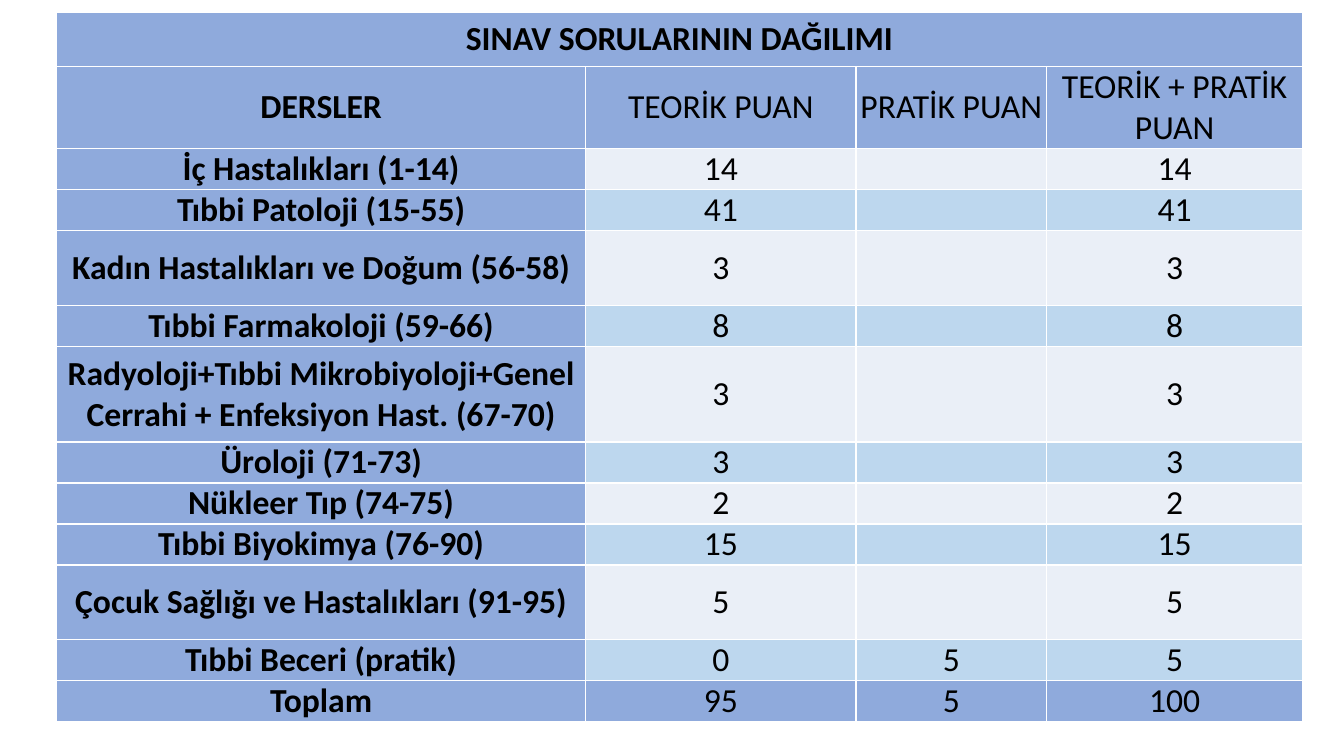
from lxml.etree import SubElement
from pptx import Presentation
from pptx.dml.color import RGBColor
from pptx.enum.text import MSO_ANCHOR, PP_ALIGN
from pptx.oxml.ns import qn
from pptx.util import Inches, Pt

# Content
TITLE = "SINAV SORULARININ DAĞILIMI"
HEADINGS = ("DERSLER", "TEORİK PUAN", "PRATİK PUAN", "TEORİK + PRATİK PUAN")
COURSES = [
    ("İç Hastalıkları (1-14)", "14", "", "14"),
    ("Tıbbi Patoloji (15-55)", "41", "", "41"),
    ("Kadın Hastalıkları ve Doğum (56-58)", "3", "", "3"),
    ("Tıbbi Farmakoloji (59-66)", "8", "", "8"),
    ("Radyoloji+Tıbbi Mikrobiyoloji+Genel Cerrahi + Enfeksiyon Hast. (67-70)",
     "3", "", "3"),
    ("Üroloji (71-73)", "3", "", "3"),
    ("Nükleer Tıp (74-75)", "2", "", "2"),
    ("Tıbbi Biyokimya (76-90)", "15", "", "15"),
    ("Çocuk Sağlığı ve Hastalıkları (91-95)", "5", "", "5"),
    ("Tıbbi Beceri (pratik)", "0", "5", "5"),
]
TOTALS = ("Toplam", "95", "5", "100")
GRID = [(TITLE, "", "", ""), HEADINGS, *COURSES, TOTALS]

COLORS = {"header": "8FAADC", "light": "EAEFF7", "blue": "BDD7EE",
          "border": "FFFFFF", "text": "000000"}
LEFT, TOP, WIDTH, HEIGHT = 0.56, 0.12, 12.37, 6.96
COLUMN_WIDTHS = (5.25, 2.68, 1.89, 2.54)
ROW_HEIGHT = 0.37
TALL_ROWS = {0: 0.54, 4: 0.74, 6: 0.95, 10: 0.74}


def write(cell, text, size=24, bold=False, font="Calibri", color="text"):
    paragraph = cell.text_frame.paragraphs[0]
    paragraph.alignment = PP_ALIGN.CENTER
    run = paragraph.add_run()
    run.text = text
    run.font.size = Pt(size)
    run.font.bold = bold
    run.font.name = font
    run.font.color.rgb = RGBColor.from_string(COLORS[color])


def style_cell(cell, fill):
    cell.vertical_anchor = MSO_ANCHOR.MIDDLE
    cell.margin_left = cell.margin_right = cell.margin_top = cell.margin_bottom = 0
    properties = cell._tc.get_or_add_tcPr()
    for side in ("a:lnL", "a:lnR", "a:lnT", "a:lnB"):
        border = SubElement(properties, qn(side), w=str(Pt(1)))
        solid = SubElement(border, qn("a:solidFill"))
        SubElement(solid, qn("a:srgbClr"), val=COLORS["border"])
    cell.fill.solid()
    cell.fill.fore_color.rgb = RGBColor.from_string(COLORS[fill])


def fill_name(row, column):
    if column == 0 or row < 2 or row == len(GRID) - 1:
        return "header"
    return "blue" if row % 2 else "light"


def main():
    presentation = Presentation()
    presentation.slide_width, presentation.slide_height = Inches(13.33), Inches(7.5)
    slide = presentation.slides.add_slide(presentation.slide_layouts[6])

    # Table frame
    frame = slide.shapes.add_table(len(GRID), len(COLUMN_WIDTHS), Inches(LEFT),
                                   Inches(TOP), Inches(WIDTH), Inches(HEIGHT))
    scores = frame.table
    for column, width in zip(scores.columns, COLUMN_WIDTHS):
        column.width = Inches(width)
    for index, row in enumerate(scores.rows):
        row.height = Inches(TALL_ROWS.get(index, ROW_HEIGHT))
    frame.height = Inches(HEIGHT)

    # Cells
    for r, values in enumerate(GRID):
        for c, value in enumerate(values):
            cell = scores.cell(r, c)
            style_cell(cell, fill_name(r, c))
            if value:
                write(cell, value, bold=c == 0)
    scores.cell(0, 0).merge(scores.cell(0, len(COLUMN_WIDTHS) - 1))

    presentation.save("out.pptx")


if __name__ == "__main__":
    main()
